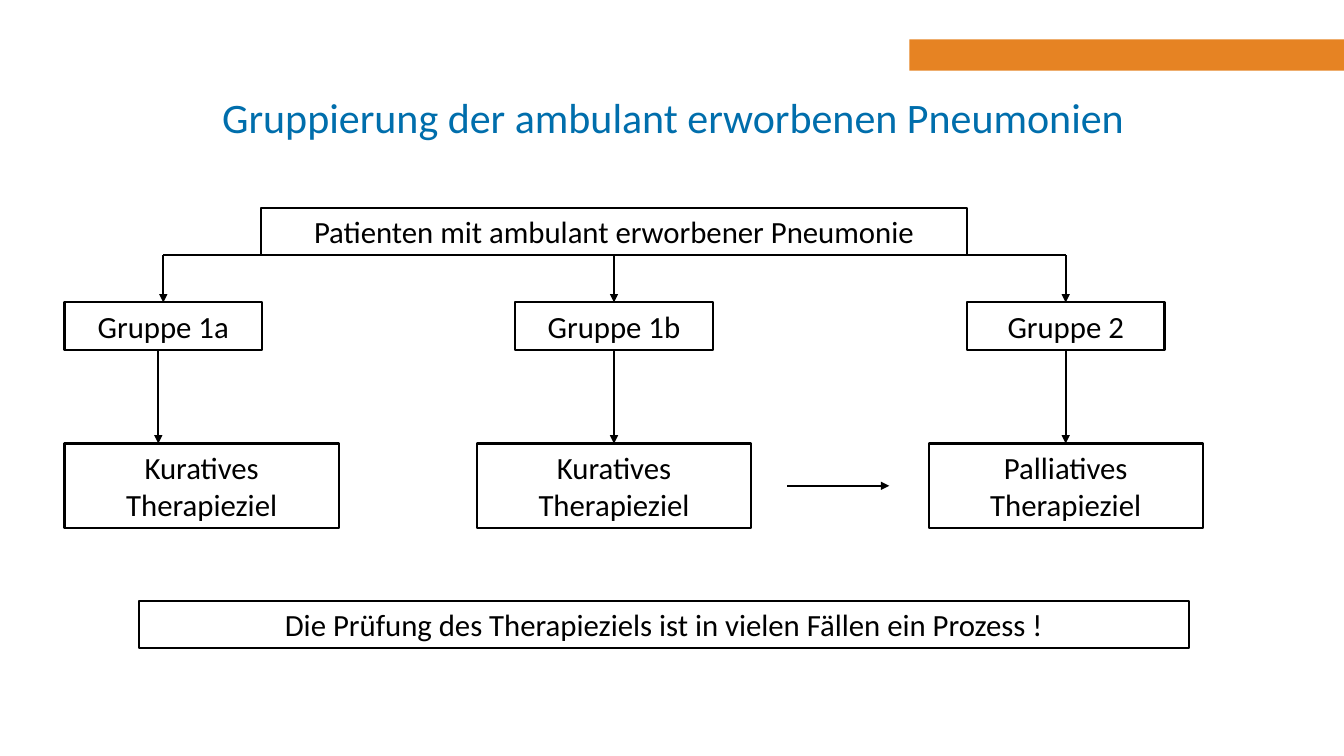
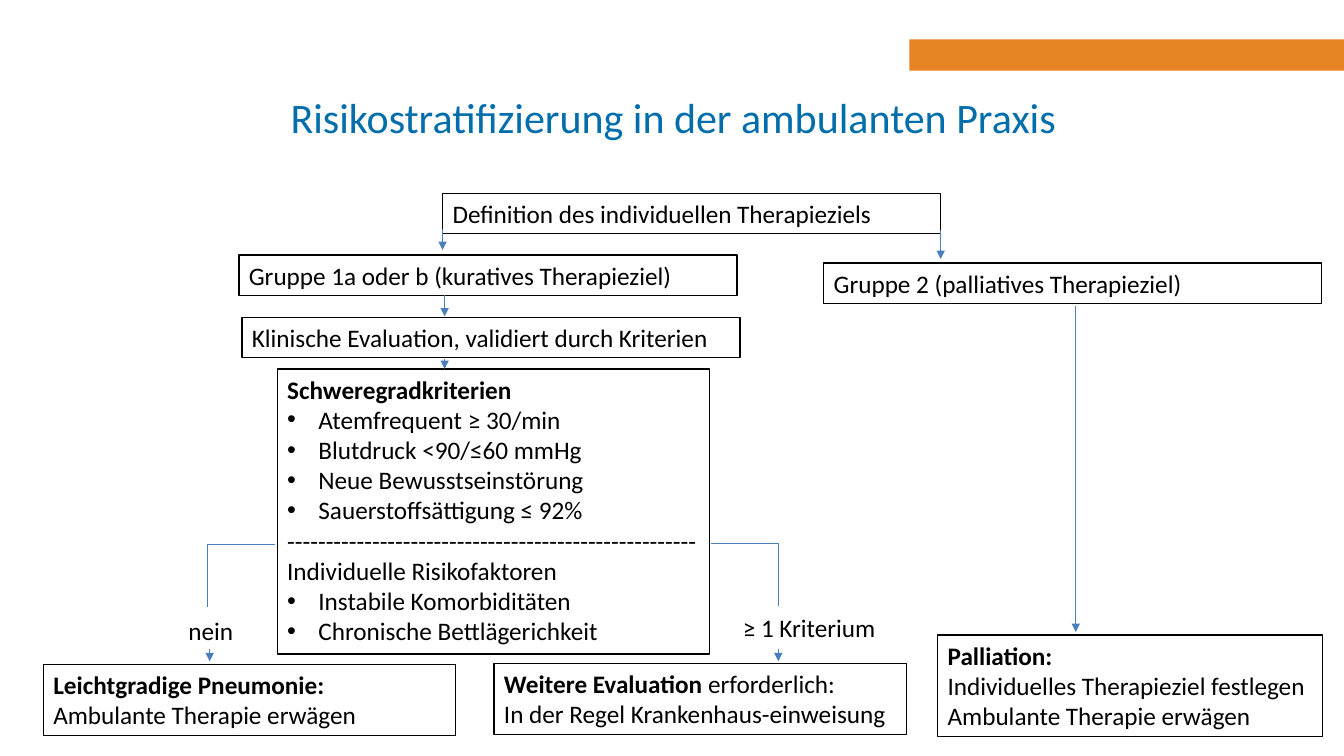
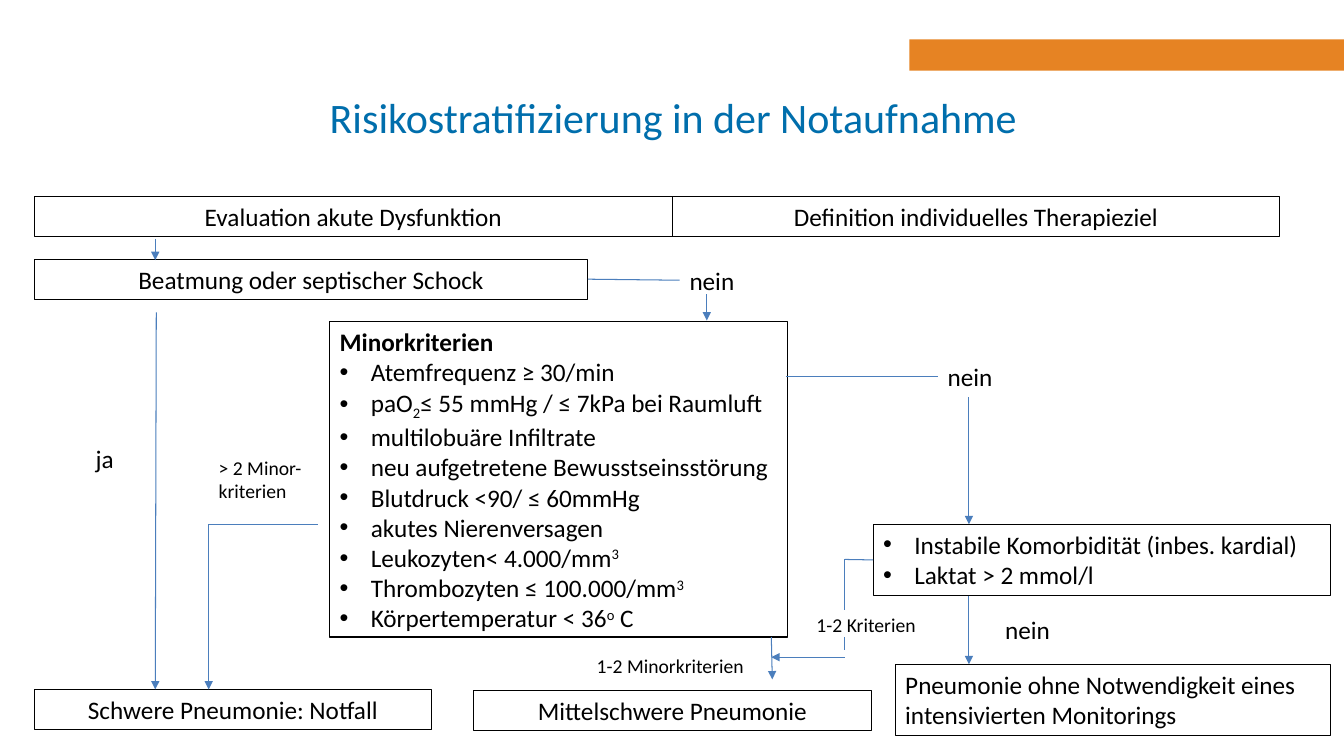
import lxml.etree
import pptx
import pptx.dml.color
import pptx.enum.shapes
import pptx.enum.text
import pptx.oxml.ns
import pptx.shapes.base
import pptx.util

Inches = pptx.util.Inches
RGBColor = pptx.dml.color.RGBColor
ALIGN = pptx.enum.text.PP_ALIGN
RECTANGLE = pptx.enum.shapes.MSO_SHAPE.RECTANGLE

ORANGE = RGBColor(0xE6, 0x83, 0x23)
TITLE_BLUE = RGBColor(0x00, 0x6E, 0xAC)
LINE_BLUE = RGBColor(0x4B, 0x7E, 0xBC)
BLACK = RGBColor(0, 0, 0)

FONT = "Calibri"
TITLE_ONLY = 5
TOP, LEFT, BOTTOM, RIGHT = range(4)
BULLET_INDENT = Inches(0.31)


def bullet(*runs):
    return {"runs": runs, "bullet": True}


def rich(*runs):
    return {"runs": runs, "bullet": False}


def bold(text):
    return text, {"b": "1"}


def raised(text):
    return text, {"baseline": "30000"}


def lowered(text):
    return text, {"baseline": "-25000"}


def add_element(parent, tag, **attributes):
    return lxml.etree.SubElement(parent, pptx.oxml.ns.qn(tag), attributes)


class Deck:
    """Shared style, plus the slide being drawn."""

    def __init__(self):
        self.presentation = pptx.Presentation()
        self.presentation.slide_width = Inches(13.33)
        self.presentation.slide_height = Inches(7.5)

    def add_slide(self, title, size, border, line_color=LINE_BLUE, line_width=0.75):
        layout = self.presentation.slide_layouts[TITLE_ONLY]
        self.slide = self.presentation.slides.add_slide(layout)
        self.size, self.border = size, border
        self.line_color, self.line_width = line_color, line_width
        self.add_band()
        shape = self.slide.shapes.title
        shape.left, shape.top = Inches(1.97), Inches(0.69)
        shape.width, shape.height = Inches(9.42), Inches(0.93)
        shape.text_frame.vertical_anchor = pptx.enum.text.MSO_ANCHOR.MIDDLE
        shape.text_frame.text = title
        paragraph = shape.text_frame.paragraphs[0]
        paragraph.alignment = ALIGN.CENTER
        self.format_font(paragraph, 30, TITLE_BLUE)

    def add_band(self):
        band = self.slide.shapes.add_shape(
            RECTANGLE, Inches(9.02), Inches(0.39), Inches(4.31), Inches(0.31))
        band.shadow.inherit = False
        band.fill.solid()
        band.fill.fore_color.rgb = ORANGE
        band.line.fill.background()

    def format_font(self, paragraph, size, color=BLACK):
        paragraph.font.name = FONT
        paragraph.font.size = pptx.util.Pt(size)
        paragraph.font.color.rgb = color

    def fill_text(self, shape, lines, alignment, size):
        frame = shape.text_frame
        frame.word_wrap = True
        frame.auto_size = pptx.enum.text.MSO_AUTO_SIZE.SHAPE_TO_FIT_TEXT
        frame.vertical_anchor = pptx.enum.text.MSO_ANCHOR.TOP
        for index, line in enumerate(lines):
            paragraph = frame.add_paragraph() if index else frame.paragraphs[0]
            paragraph.alignment = alignment
            line = rich(line) if isinstance(line, str) else line
            if line["bullet"]:
                properties = paragraph._p.get_or_add_pPr()
                properties.set("marL", str(BULLET_INDENT))
                properties.set("indent", str(-BULLET_INDENT))
                add_element(properties, "a:buFont", typeface="Arial")
                add_element(properties, "a:buChar", char="•")
            for part in line["runs"]:
                text, attributes = (part, {}) if isinstance(part, str) else part
                run = paragraph.add_run()
                run.text = text
                for name, value in attributes.items():
                    run._r.get_or_add_rPr().set(name, value)
            self.format_font(paragraph, size)

    def box(self, left, top, width, height, *lines, alignment=ALIGN.LEFT):
        shape = self.slide.shapes.add_shape(
            RECTANGLE, Inches(left), Inches(top), Inches(width), Inches(height))
        shape.shadow.inherit = False
        shape.fill.background()
        shape.line.color.rgb = BLACK
        shape.line.width = pptx.util.Pt(self.border)
        self.fill_text(shape, lines, alignment, self.size)
        return shape

    def centered_box(self, left, top, width, height, text):
        return self.box(left, top, width, height, text, alignment=ALIGN.CENTER)

    def label(self, left, top, width, height, *lines, size=18, alignment=ALIGN.LEFT):
        shape = self.slide.shapes.add_textbox(
            Inches(left), Inches(top), Inches(width), Inches(height))
        self.fill_text(shape, lines, alignment, size)
        return shape

    def line(self, start, end, arrow=False):
        """Each end is a point (x, y) or a joint (shape, side)."""
        joints = [isinstance(point[0], pptx.shapes.base.BaseShape)
                  for point in (start, end)]
        points = [(0, 0) if joined else point
                  for joined, point in zip(joints, (start, end))]
        connector = self.slide.shapes.add_connector(
            pptx.enum.shapes.MSO_CONNECTOR.STRAIGHT,
            *(Inches(value) for point in points for value in point))
        if joints[0]:
            connector.begin_connect(*start)
        if joints[1]:
            connector.end_connect(*end)
        connector.line.color.rgb = self.line_color
        connector.line.width = pptx.util.Pt(self.line_width)
        properties = connector._element.spPr
        if arrow:
            add_element(properties.get_or_add_ln(), "a:tailEnd", type="triangle")
        add_element(properties, "a:effectLst")

    def arrow(self, start, end):
        self.line(start, end, arrow=True)


def build_groups(deck):
    deck.add_slide("Gruppierung der ambulant erworbenen Pneumonien", 22, 1.5,
                   line_color=BLACK, line_width=1.5)
    patients = deck.centered_box(
        2.59, 2.06, 7, 0.47, "Patienten mit ambulant erworbener Pneumonie")

    # Groups and their therapy goals
    columns = [
        ("Gruppe 1a", 0.64, "Kuratives Therapieziel", 0.64),
        ("Gruppe 1b", 5.11, "Kuratives Therapieziel", 4.73),
        ("Gruppe 2", 9.59, "Palliatives Therapieziel", 9.21),
    ]
    groups, goals = [], []
    for group, group_left, goal, goal_left in columns:
        groups.append(deck.centered_box(group_left, 3, 1.96, 0.47, group))
        goals.append(deck.centered_box(goal_left, 4.4, 2.72, 0.84, goal))
    deck.centered_box(1.38, 5.96, 10.41, 0.47,
                      "Die Prüfung des Therapieziels ist in vielen Fällen ein Prozess !")

    # Branches from the patients to the groups
    branch_y = 2.53
    deck.arrow((patients, BOTTOM), (groups[1], TOP))
    for group, center, edge in ((groups[0], 1.62, 2.59), (groups[2], 10.57, 9.59)):
        deck.line((center, branch_y), (edge, branch_y))
        deck.arrow((center, branch_y), (group, TOP))

    # Groups to goals
    deck.arrow((1.57, 3.47), (1.57, 4.4))
    for group, goal in zip(groups[1:], goals[1:]):
        deck.arrow((group, BOTTOM), (goal, TOP))
    deck.arrow((7.81, 4.82), (8.82, 4.82))


def build_practice(deck):
    deck.add_slide("Risikostratifizierung in der ambulanten Praxis", 18, 1)

    # Steps
    for left, top, text in (
            (4.39, 1.92, "Definition des individuellen Therapieziels"),
            (8.17, 2.61, "Gruppe 2 (palliatives Therapieziel)"),
            (2.37, 2.53, "Gruppe 1a oder b (kuratives Therapieziel)"),
            (2.4, 3.15, "Klinische Evaluation, validiert durch Kriterien")):
        deck.box(left, top, 4.94, 0.4, text)
    deck.box(2.75, 3.66, 4.29, 2.83,
             rich(bold("Schweregradkriterien")),
             bullet("Atemfrequent ≥ 30/min"),
             bullet("Blutdruck <90/≤60 mmHg"),
             bullet("Neue Bewusstseinstörung"),
             bullet("Sauerstoffsättigung ≤ 92%"),
             "-" * 53,
             "Individuelle Risikofaktoren",
             bullet("Instabile Komorbiditäten"),
             bullet("Chronische Bettlägerichkeit"))

    # Outcomes
    deck.box(9.3, 6.3, 3.82, 1.01, rich(bold("Palliation:")),
             "Individuelles Therapieziel festlegen", "Ambulante Therapie erwägen")
    deck.box(0.43, 6.59, 4.09, 0.71, rich(bold("Leichtgradige Pneumonie:")),
             "Ambulante Therapie erwägen")
    deck.box(4.9, 6.58, 4.09, 0.71, rich(bold("Weitere Evaluation "), "erforderlich:"),
             "In der Regel Krankenhaus-einweisung")
    deck.label(1.77, 6.06, 0.69, 0.4, "nein")
    deck.label(7.05, 6.03, 1.95, 0.4, "≥ 1 Kriterium", alignment=ALIGN.CENTER)

    # Vertical arrows: x, top, bottom
    for x, top, bottom in ((9.33, 2.28, 2.57), (4.39, 2.27, 2.48), (4.41, 2.93, 3.14),
                           (4.41, 3.56, 3.66), (10.67, 3.04, 6.27),
                           (7.72, 6.44, 6.56), (2.08, 6.44, 6.56)):
        deck.arrow((x, top), (x, bottom))

    # Branches to the two answers
    for edge, x, y in ((7.05, 7.72, 5.39), (2.73, 2.06, 5.4)):
        deck.line((edge, y), (x, y))
        deck.line((x, y), (x, y + 0.62))


def build_emergency(deck):
    deck.add_slide("Risikostratifizierung in der Notaufnahme", 18, 0.75)

    # Evaluation and outcomes
    deck.centered_box(0.34, 1.95, 6.33, 0.4, "Evaluation akute Dysfunktion")
    deck.centered_box(6.67, 1.95, 6.02, 0.4, "Definition individuelles Therapieziel")
    shock = deck.centered_box(0.34, 2.57, 5.49, 0.4, "Beatmung oder septischer Schock")
    deck.centered_box(0.34, 6.84, 3.94, 0.4, "Schwere Pneumonie: Notfall")
    deck.centered_box(4.7, 6.85, 3.94, 0.4, "Mittelschwere Pneumonie")
    deck.box(8.88, 6.59, 4.32, 0.71,
             "Pneumonie ohne Notwendigkeit eines intensivierten Monitorings")

    # Criteria
    comorbidity = deck.box(8.66, 5.2, 4.54, 0.71,
                           bullet("Instabile Komorbidität (inbes. kardial)"),
                           bullet("Laktat > 2 mmol/l"))
    deck.box(3.27, 3.19, 4.54, 3.13,
             rich(bold("Minorkriterien")),
             bullet("Atemfrequenz ≥ 30/min"),
             bullet("paO", lowered("2"), "≤ 55 mmHg / ≤ 7kPa bei Raumluft"),
             bullet("multilobuäre Infiltrate"),
             bullet("neu aufgetretene Bewusstseinsstörung"),
             bullet("Blutdruck <90/ ≤ 60mmHg"),
             bullet("akutes Nierenversagen"),
             bullet("Leukozyten< 4.000/mm", raised("3")),
             bullet("Thrombozyten ≤ 100.000/mm", raised("3")),
             bullet("Körpertemperatur < 36", raised("o"), " C"))

    # Answers
    no_minor = deck.label(9.3, 3.54, 0.76, 0.4, "nein")
    no_shock = deck.label(6.74, 2.58, 0.92, 0.4, "nein")
    deck.label(0.85, 4.35, 0.56, 0.4, "ja")
    deck.label(9.87, 6.05, 0.92, 0.4, "nein")
    deck.label(2.07, 4.47, 1.09, 0.57, "> 2 Minor-", "kriterien", size=14)
    deck.label(5.82, 6.44, 2.17, 0.34, "1-2 Minorkriterien", size=14)
    deck.label(8, 6.03, 1.3, 0.34, "1-2 Kriterien", size=14)

    # Arrows
    for start, end in (((1.54, 2.37), (1.54, 2.58)), ((1.55, 3.1), (1.54, 6.84)),
                       ((7.01, 2.92), (7.01, 3.18)), ((9.61, 3.94), (9.61, 5.2)),
                       ((9.61, 5.91), (9.61, 6.59)), ((2.07, 5.2), (2.07, 6.84)),
                       ((7.65, 6.32), (7.66, 6.74)), ((8.38, 6.52), (7.65, 6.52))):
        deck.arrow(start, end)

    # Plain lines
    for start, end in (((shock, RIGHT), (no_shock, LEFT)),
                       ((7.8, 3.74), (no_minor, LEFT)),
                       ((3.15, 5.2), (2.07, 5.2)),
                       ((comorbidity, LEFT), (8.38, 5.55)),
                       ((8.38, 5.55), (8.38, 6.05)),
                       ((8.38, 6.32), (8.38, 6.45))):
        deck.line(start, end)


def main():
    deck = Deck()
    build_groups(deck)
    build_practice(deck)
    build_emergency(deck)
    deck.presentation.save("out.pptx")


if __name__ == "__main__":
    main()
